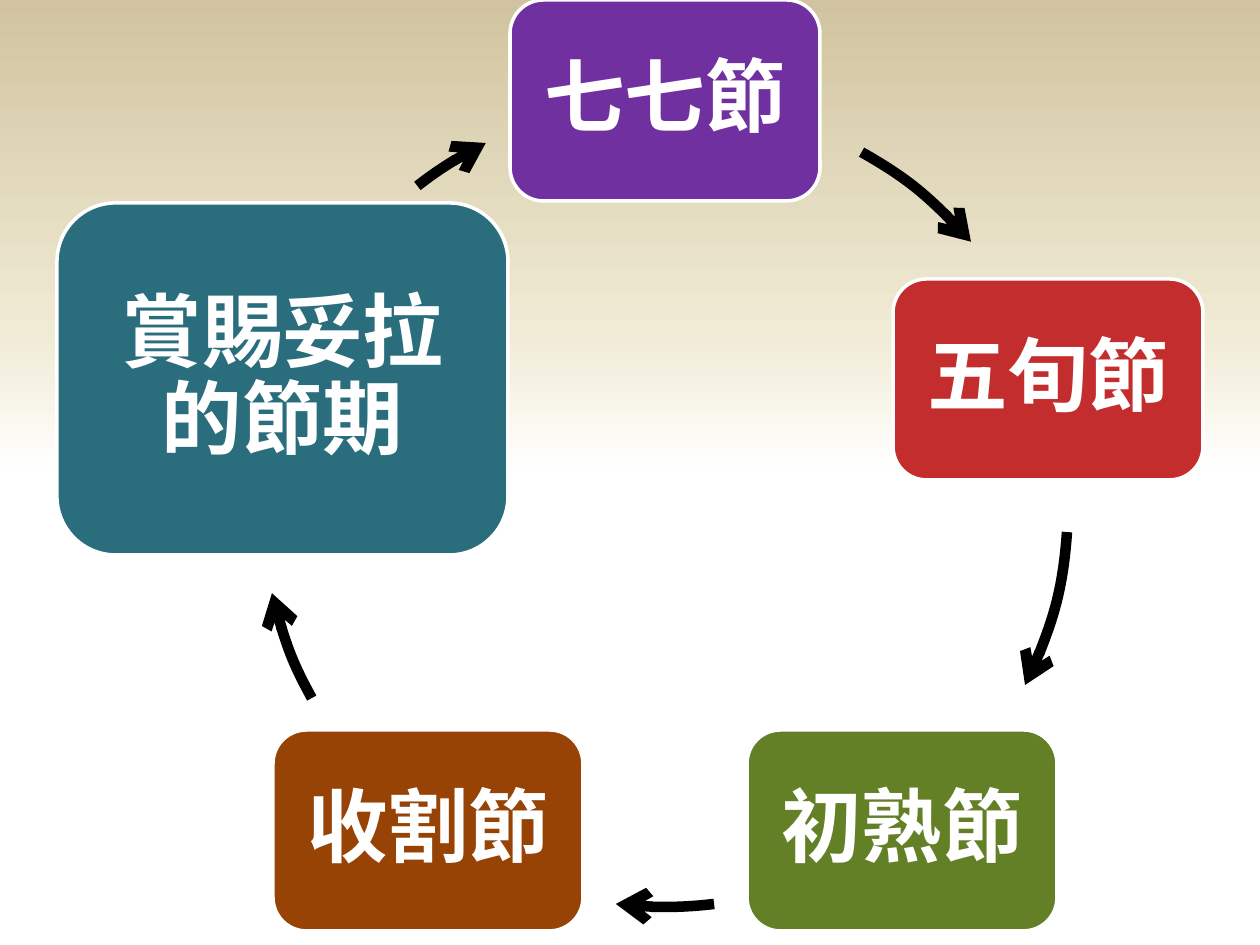
from copy import deepcopy
from dataclasses import dataclass

from lxml import etree
from pptx import Presentation
from pptx.dml.color import RGBColor
from pptx.enum.shapes import MSO_SHAPE
from pptx.enum.text import MSO_ANCHOR, PP_ALIGN
from pptx.oxml.ns import qn
from pptx.util import Emu, Pt

EMU_PER_PX = 914400 / 126
ROUNDED = MSO_SHAPE.ROUNDED_RECTANGLE
ARC = MSO_SHAPE.ARC
MIDDLE = MSO_ANCHOR.MIDDLE
CENTER = PP_ALIGN.CENTER

WHITE = RGBColor(0xFF, 0xFF, 0xFF)
BLACK = RGBColor(0x00, 0x00, 0x00)
CREAM = RGBColor(0xF0, 0xEB, 0xD5)
SAND = RGBColor(0xD1, 0xC3, 0x9F)
PURPLE = RGBColor(0x70, 0x30, 0xA0)
RED = RGBColor(0xC3, 0x2D, 0x2E)
GREEN = RGBColor(0x63, 0x80, 0x26)
BROWN = RGBColor(0x96, 0x43, 0x05)
TEAL = RGBColor(0x2A, 0x6D, 0x7D)

BACKGROUND_STOPS = ((0.5, WHITE), (0.65, CREAM), (1.0, SAND))
CYCLE_LEFT, CYCLE_TOP, CYCLE_SIZE = 262, 101, 806
TEXT_INSET = 23


@dataclass(frozen=True)
class Festival:
    """A box of the cycle and the arc, in degrees clockwise from east, after it."""
    name: str
    color: RGBColor
    left: int
    top: int
    arc_start: float
    arc_end: float
    width: int = 310
    height: int = 201


FESTIVALS = (
    Festival("七七節", PURPLE, 510, 0, 299.2, 319.4),
    Festival("五旬節", RED, 893, 279, 4, 26.7),
    Festival("初熟節", GREEN, 747, 730, 83, 97),
    Festival("收割節", BROWN, 273, 730, 151.2, 167.2),
    Festival("賞賜妥拉的節期", TEAL, 57, 203, 232.1, 243.6, 451, 352),
)


def px(length: int) -> Emu:
    return Emu(round(length * EMU_PER_PX))


def paint_background(slide) -> None:
    fill = slide.background.fill
    fill.gradient()
    fill.gradient_angle = 90
    stop_list = slide.element.find(".//" + qn("a:gsLst"))
    stop_list.append(deepcopy(stop_list[-1]))
    for stop, (position, color) in zip(fill.gradient_stops, BACKGROUND_STOPS):
        stop.position = position
        stop.color.rgb = color


def add_festival(slide, festival: Festival) -> None:
    shape = slide.shapes.add_shape(
        ROUNDED, px(festival.left), px(festival.top),
        px(festival.width), px(festival.height))
    shape.shadow.inherit = False
    shape.fill.solid()
    shape.fill.fore_color.rgb = festival.color
    shape.line.color.rgb = WHITE
    shape.line.width = Pt(2)

    frame = shape.text_frame
    frame.text = festival.name
    frame.word_wrap = True
    frame.vertical_anchor = MIDDLE
    frame.margin_left = frame.margin_right = px(TEXT_INSET)
    frame.margin_top = frame.margin_bottom = px(TEXT_INSET)
    paragraph = frame.paragraphs[0]
    paragraph.alignment = CENTER
    paragraph.line_spacing = 0.9
    paragraph.space_after = Pt(16)
    font = paragraph.runs[0].font
    font.name = "Calibri"
    font.size = Pt(46)
    font.bold = True
    font.color.rgb = WHITE


def add_cycle_arrow(slide, start: float, end: float) -> None:
    arrow = slide.shapes.add_shape(
        ARC, px(CYCLE_LEFT), px(CYCLE_TOP), px(CYCLE_SIZE), px(CYCLE_SIZE))
    # Angles are stored in 60000ths of a degree, adjustments in 100000ths.
    arrow.adjustments[0] = start * 0.6
    arrow.adjustments[1] = end * 0.6
    arrow.shadow.inherit = False
    arrow.fill.background()
    arrow.line.color.rgb = BLACK
    arrow.line.width = Pt(6)
    line = arrow.element.spPr.find(qn("a:ln"))
    etree.SubElement(line, qn("a:tailEnd"), type="arrow")


def main() -> None:
    presentation = Presentation()
    presentation.slide_width = px(1260)
    presentation.slide_height = px(945)
    slide = presentation.slides.add_slide(presentation.slide_layouts[6])
    paint_background(slide)
    for festival in FESTIVALS:
        add_festival(slide, festival)
        add_cycle_arrow(slide, festival.arc_start, festival.arc_end)
    presentation.save("out.pptx")


if __name__ == "__main__":
    main()
